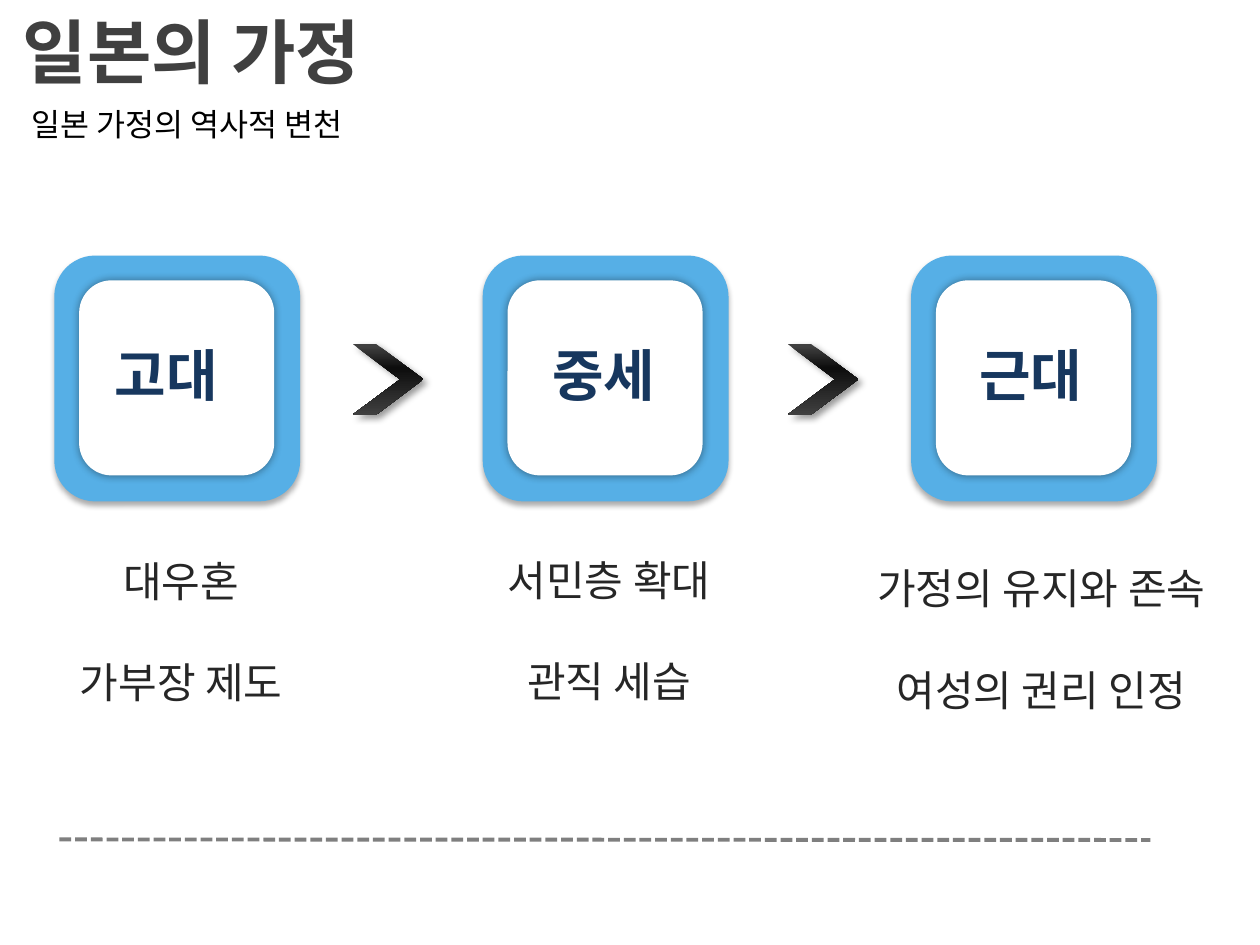
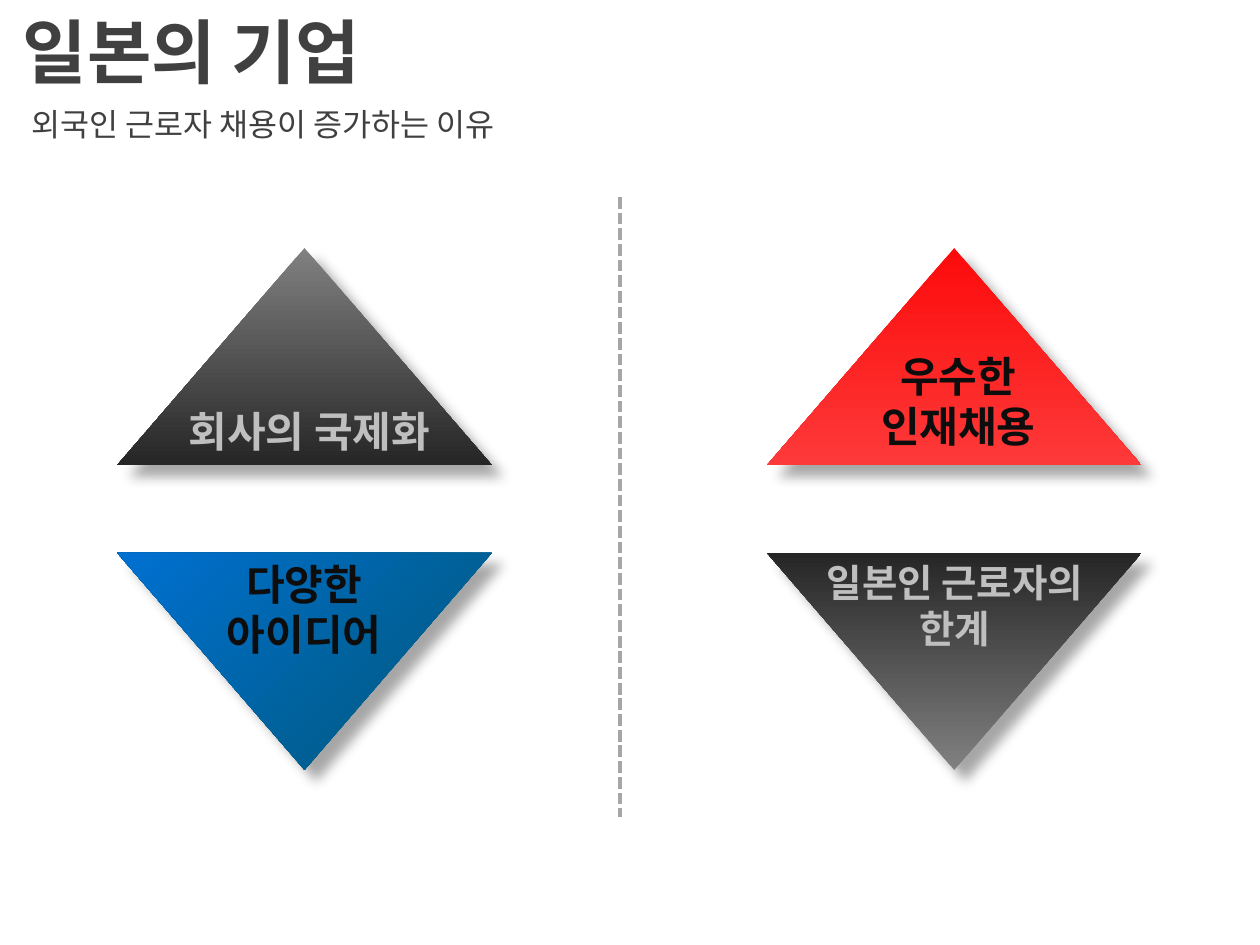
"""Build two slides on families and companies in Japan."""
from dataclasses import dataclass

from pptx import Presentation
from pptx.dml.color import RGBColor
from pptx.enum.dml import MSO_LINE
from pptx.enum.shapes import MSO_CONNECTOR, MSO_SHAPE
from pptx.enum.text import PP_ALIGN
from pptx.oxml.ns import qn
from pptx.oxml.xmlchemy import OxmlElement
from pptx.shapes.autoshape import Shape
from pptx.slide import Slide
from pptx.util import Pt

LEFT, CENTER = PP_ALIGN.LEFT, PP_ALIGN.CENTER
ROUNDED, CHEVRON = MSO_SHAPE.ROUNDED_RECTANGLE, MSO_SHAPE.CHEVRON
TRIANGLE = MSO_SHAPE.ISOSCELES_TRIANGLE
STRAIGHT, DASHES = MSO_CONNECTOR.STRAIGHT, MSO_LINE.SQUARE_DOT
FONT = "Arial"
COLORS = {
    "title": "404040", "black": "000000", "body": "262626", "navy": "17375E",
    "sky": "56AFE6", "white": "FFFFFF", "ink": "0D0D0D", "silver": "BFBFBF",
    "rule": "7F7F7F", "divider": "A6A6A6",
}


@dataclass(frozen=True)
class Frame:
    left: float
    top: float
    width: float
    height: float


@dataclass(frozen=True)
class Style:
    size: float
    color: str
    bold: bool = False
    align: PP_ALIGN = CENTER
    gap: float = 0


@dataclass(frozen=True)
class Shadow:
    opacity: int
    blur: float
    distance: float
    angle: int


@dataclass(frozen=True)
class Gradient:
    stops: tuple[tuple[int, str], ...]
    angle: int = 90


@dataclass(frozen=True)
class Stage:
    label: str
    label_left: float
    details: tuple[str, ...]
    detail_area: Frame


@dataclass(frozen=True)
class Reason:
    lines: tuple[str, ...]
    left: float
    pointing_down: bool
    fill: Gradient
    label_area: Frame
    style: Style


TITLE = Style(40, "title", bold=True, align=LEFT)
STAGE_LABEL = Style(32, "navy", bold=True)
STAGE_DETAILS = Style(24, "body", gap=29)
DARK_LABEL = Style(24, "ink", bold=True)
LIGHT_LABEL = Style(24, "silver", bold=True)
SMALL_LIGHT_LABEL = Style(22, "silver", bold=True)

TILE_SHADOW = Shadow(32, 3.5, 2.2, 90)
INSET_SHADOW = Shadow(40, 5, 0, 0)
CHEVRON_SHADOW = Shadow(40, 4, 3, 45)
TRIANGLE_SHADOW = Shadow(34, 7, 9, 45)

CHARCOAL = Gradient(((3, "404040"), (34, "0D0D0D"), (100, "404040")))
GRAY = Gradient(((0, "808080"), (100, "262626")))
RED = Gradient(((0, "FD0B0B"), (100, "FD3939")))
BLUE = Gradient(((0, "005776"), (100, "0070D1")), 135)

TILE_LEFT, TILE_TOP, TILE_SIZE, TILE_STEP = 31, 146, 140.5, 244.8
INSET, INSET_SIZE = 14.2, 111.5
CHEVRON_LEFTS, CHEVRON_TOP, CHEVRON_SIZE = (201.5, 450), 196.5, 40.5
LABEL_TOP, LABEL_WIDTH, LABEL_HEIGHT = 190.8, 118, 46
TRIANGLE_WIDTH, TRIANGLE_HEIGHT = 214, 124
UP_TOP, DOWN_TOP = 141.8, 316
LEFT_COLUMN, RIGHT_COLUMN = 67, 438.3

STAGES = (
    Stage("고대", 36, ("대우혼", "가부장 제도"), Frame(31, 314, 145, 126)),
    Stage("중세", 286, ("서민층 확대", "관직 세습"), Frame(263.5, 313.2, 169, 149)),
    Stage("근대", 530, ("가정의 유지와 존속", "여성의 권리 인정"),
          Frame(478.8, 318.2, 232.5, 117)),
)
REASONS = (
    Reason(("회사의 국제화",), LEFT_COLUMN, False, GRAY,
           Frame(90, 228.2, 173.5, 36), LIGHT_LABEL),
    Reason(("다양한", "아이디어"), LEFT_COLUMN, True, BLUE,
           Frame(94.3, 315.4, 159, 65.5), DARK_LABEL),
    Reason(("일본인 근로자의", "한계"), RIGHT_COLUMN, True, GRAY,
           Frame(450.7, 316, 190, 60.5), SMALL_LIGHT_LABEL),
    Reason(("우수한", "인재채용"), RIGHT_COLUMN, False, RED,
           Frame(470.2, 196.6, 154.8, 65.5), DARK_LABEL),
)


def add_text(page: Slide, frame: Frame, lines: tuple[str, ...], style: Style,
             wrap: bool = True) -> None:
    """Add a text box with one paragraph per line."""
    box = page.shapes.add_textbox(Pt(frame.left), Pt(frame.top),
                                  Pt(frame.width), Pt(frame.height))
    box.text_frame.word_wrap = wrap
    box.text_frame.text = "\n".join(lines)
    for index, para in enumerate(box.text_frame.paragraphs):
        para.alignment = style.align
        if index and style.gap:
            para.space_before = Pt(style.gap)
        for span in para.runs:
            span.font.name = FONT
            span.font.size = Pt(style.size)
            span.font.bold = style.bold
            span.font.color.rgb = RGBColor.from_string(COLORS[style.color])


def color_element(tag: str, color: str):
    """Return an element that holds one RGB colour."""
    element = OxmlElement(tag)
    rgb = OxmlElement("a:srgbClr")
    rgb.set("val", color)
    element.append(rgb)
    return element


def apply_gradient(shape: Shape, gradient: Gradient) -> None:
    """Fill a shape with a linear gradient."""
    shape.fill.gradient()
    shape.fill.gradient_angle = 360 - gradient.angle
    stop_list = shape.element.spPr.find(qn("a:gradFill")).find(qn("a:gsLst"))
    for old_stop in list(stop_list):
        stop_list.remove(old_stop)
    for position, color in gradient.stops:
        stop = color_element("a:gs", color)
        stop.set("pos", str(position * 1000))
        stop_list.append(stop)


def apply_shadow(shape: Shape, shadow: Shadow) -> None:
    """Give a shape a soft black outer shadow."""
    shape.shadow.inherit = False
    outer = color_element("a:outerShdw", COLORS["black"])
    outer.set("blurRad", str(Pt(shadow.blur)))
    outer.set("dist", str(Pt(shadow.distance)))
    outer.set("dir", str(shadow.angle * 60000))
    outer.set("algn", "ctr")
    outer.set("rotWithShape", "0")
    alpha = OxmlElement("a:alpha")
    alpha.set("val", str(shadow.opacity * 1000))
    outer[0].append(alpha)
    shape.element.spPr.find(qn("a:effectLst")).append(outer)


def add_figure(page: Slide, kind: MSO_SHAPE, frame: Frame,
               fill: str | Gradient, shadow: Shadow) -> Shape:
    """Add an unlined preset shape with a fill and a shadow."""
    shape = page.shapes.add_shape(kind, Pt(frame.left), Pt(frame.top),
                                  Pt(frame.width), Pt(frame.height))
    if isinstance(fill, Gradient):
        apply_gradient(shape, fill)
    else:
        shape.fill.solid()
        shape.fill.fore_color.rgb = RGBColor.from_string(COLORS[fill])
    shape.line.fill.background()
    apply_shadow(shape, shadow)
    return shape


def add_dashes(page: Slide, start: tuple[float, float],
               end: tuple[float, float], color: str) -> None:
    """Add a dashed straight line."""
    rule = page.shapes.add_connector(STRAIGHT, *map(Pt, start + end))
    rule.line.color.rgb = RGBColor.from_string(COLORS[color])
    rule.line.width = Pt(2.25)
    rule.line.dash_style = DASHES
    rule.element.spPr.append(OxmlElement("a:effectLst"))


def add_page(deck: Presentation, title: str, subtitle: str,
             subtitle_width: float, subtitle_color: str) -> Slide:
    """Add a blank slide with the shared heading."""
    page = deck.slides.add_slide(deck.slide_layouts[6])
    add_text(page, Frame(6, 1.5, 546, 55.5), (title,), TITLE)
    add_text(page, Frame(10.8, 56.2, subtitle_width, 29), (subtitle,),
             Style(18, subtitle_color, align=LEFT), wrap=False)
    return page


def add_stage(page: Slide, index: int, stage: Stage) -> None:
    """Add the tile, label and details of one period."""
    left = TILE_LEFT + index * TILE_STEP
    add_figure(page, ROUNDED, Frame(left, TILE_TOP, TILE_SIZE, TILE_SIZE),
               "sky", TILE_SHADOW)
    add_figure(page, ROUNDED,
               Frame(left + INSET, TILE_TOP + INSET, INSET_SIZE, INSET_SIZE),
               "white", INSET_SHADOW)
    add_text(page, Frame(stage.label_left, LABEL_TOP, LABEL_WIDTH, LABEL_HEIGHT),
             (stage.label,), STAGE_LABEL)
    add_text(page, stage.detail_area, stage.details, STAGE_DETAILS)


def add_reason(page: Slide, reason: Reason) -> None:
    """Add one labelled triangle."""
    top = DOWN_TOP if reason.pointing_down else UP_TOP
    triangle = add_figure(
        page, TRIANGLE, Frame(reason.left, top, TRIANGLE_WIDTH, TRIANGLE_HEIGHT),
        reason.fill, TRIANGLE_SHADOW)
    if reason.pointing_down:
        triangle.element.spPr.find(qn("a:xfrm")).set("flipV", "1")
    add_text(page, reason.label_area, reason.lines, reason.style)


def build_family_page(deck: Presentation) -> None:
    """Build the slide on the history of the family."""
    page = add_page(deck, "일본의 가정", "일본 가정의 역사적 변천", 215.3, "black")
    for left in CHEVRON_LEFTS:
        chevron = add_figure(
            page, CHEVRON, Frame(left, CHEVRON_TOP, CHEVRON_SIZE, CHEVRON_SIZE),
            CHARCOAL, CHEVRON_SHADOW)
        chevron.adjustments[0] = 0.67
    for index, stage in enumerate(STAGES):
        add_stage(page, index, stage)
    add_dashes(page, (34, 479.7), (657.4, 480), "rule")


def build_company_page(deck: Presentation) -> None:
    """Build the slide on hiring foreign workers."""
    page = add_page(deck, "일본의 기업", "외국인 근로자 채용이 증가하는 이유",
                    307.4, "title")
    add_dashes(page, (354.3, 112.5), (354.3, 466.6), "divider")
    for reason in REASONS:
        add_reason(page, reason)


def main() -> None:
    """Build and save the deck."""
    deck = Presentation()
    deck.slide_width, deck.slide_height = Pt(720), Pt(540)
    build_family_page(deck)
    build_company_page(deck)
    deck.save("out.pptx")


if __name__ == "__main__":
    main()
